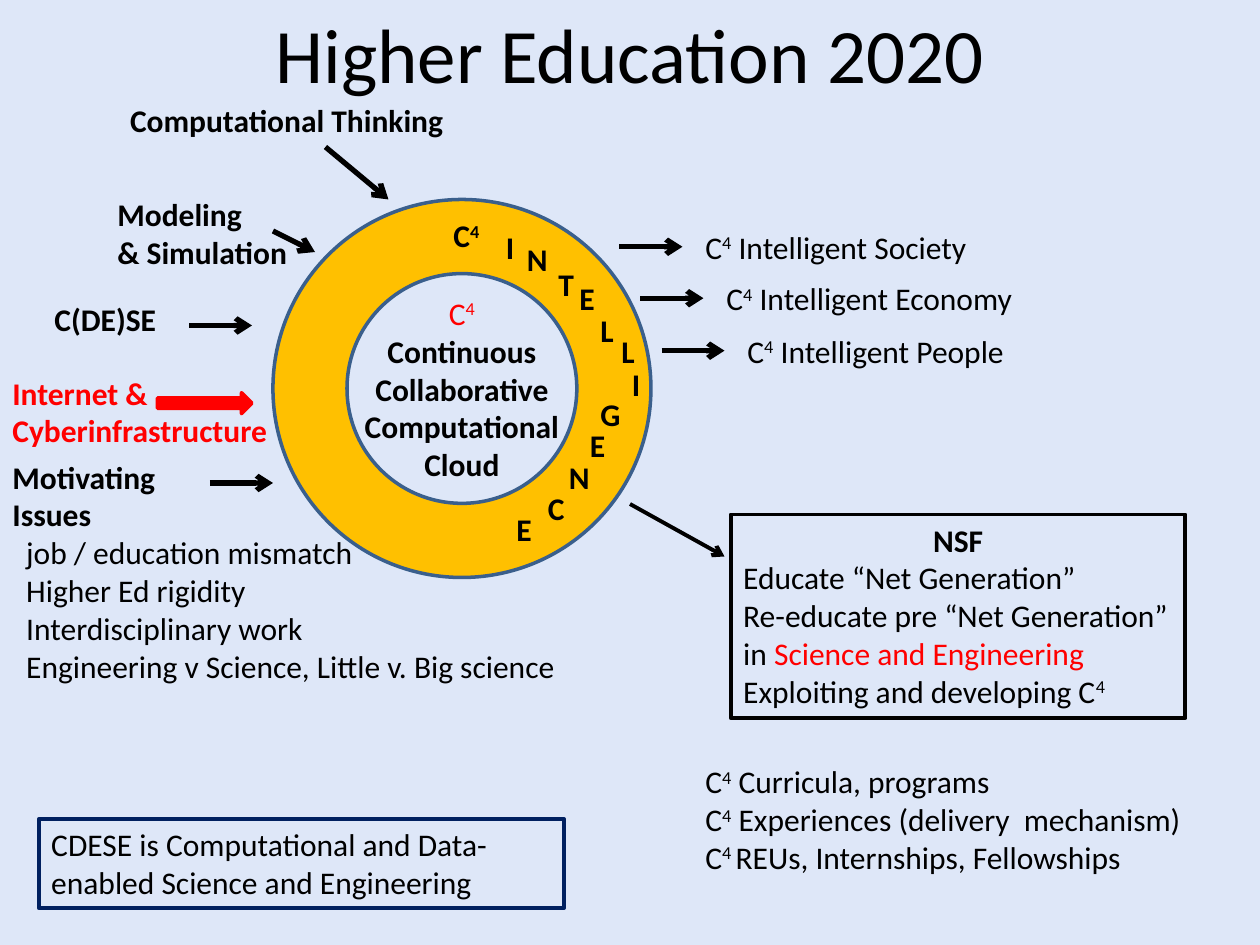
from dataclasses import dataclass

from lxml.etree import SubElement
from pptx import Presentation
from pptx.dml.color import RGBColor
from pptx.enum.shapes import MSO_CONNECTOR, MSO_SHAPE
from pptx.enum.text import MSO_ANCHOR, PP_ALIGN
from pptx.oxml.ns import qn
from pptx.util import Inches, Pt


@dataclass(frozen=True)
class Theme:
    font: str = "Calibri"
    title_size: float = 44
    body_size: float = 18
    background: RGBColor = RGBColor.from_string("DEE7F8")
    ink: RGBColor = RGBColor.from_string("000000")
    accent: RGBColor = RGBColor.from_string("FF0000")
    ring: RGBColor = RGBColor.from_string("FFC000")
    ring_edge: RGBColor = RGBColor.from_string("3A5F8C")
    navy: RGBColor = RGBColor.from_string("002060")


theme = Theme()

# Grid of 120 columns by 90 rows
COLUMNS, ROWS = 120, 90
deck = Presentation()
deck.slide_width, deck.slide_height = Inches(10), Inches(7.5)
CELL = deck.slide_width // COLUMNS
LINE_ROWS = 3.64  # height of one line of body text
PADDING_ROWS = 1.2


def grid(*cells):
    return [round(cell * CELL) for cell in cells]


def write(holder, text, size=theme.body_size, color=theme.ink, bold=False,
          align=PP_ALIGN.LEFT, indent=0, wrap=False, anchor=MSO_ANCHOR.TOP):
    """Append lines of text; *marks accent* and ^marks superscript^."""
    frame = holder.text_frame
    frame.word_wrap, frame.vertical_anchor = wrap, anchor
    for line in text.split("\n"):
        first = frame.paragraphs[0]
        paragraph = frame.add_paragraph() if first.runs else first
        paragraph.alignment = align
        if indent:
            paragraph._p.get_or_add_pPr().set("marL", str(Inches(indent)))
        for i, part in enumerate(line.split("*")):
            for j, piece in enumerate(part.split("^")):
                if not piece:
                    continue
                run = paragraph.add_run()
                run.text = piece
                run.font.name, run.font.size, run.font.bold = theme.font, Pt(size), bold
                run.font.color.rgb = theme.accent if i % 2 else color
                if j % 2:
                    run._r.get_or_add_rPr().set("baseline", "30000")


def panel(preset, cells, edge, width, fill=None):
    shape = slide.shapes.add_shape(preset, *grid(*cells))
    shape.shadow.inherit = False
    shape.line.color.rgb, shape.line.width = edge, Pt(width)
    if fill is None:
        shape.fill.background()
    else:
        shape.fill.solid()
        shape.fill.fore_color.rgb = fill
    return shape


# Slide and title
slide = deck.slides.add_slide(deck.slide_layouts[5])
slide.background.fill.solid()
slide.background.fill.fore_color.rgb = theme.background
title = slide.shapes.title
title.left, title.top, title.width, title.height = grid(6, 0, 108, 10)
write(title, "Higher Education 2020", size=theme.title_size,
      align=PP_ALIGN.CENTER, wrap=True, anchor=MSO_ANCHOR.MIDDLE)

# Ring with the four Cs
ring = panel(MSO_SHAPE.DONUT, (26, 19, 36, 36), theme.ring_edge, 2, theme.ring)
ring.adjustments[0] = 0.196
centered = {"align": PP_ALIGN.CENTER, "anchor": MSO_ANCHOR.MIDDLE, "wrap": True}
write(ring, "*C^4^*", **centered)
write(ring, "Continuous\nCollaborative\nComputational\nCloud", bold=True, **centered)

# Letters around the ring
letter_cells = [(47, 21.1), (49, 22.3), (52, 24.7), (54, 26), (56, 29), (58, 31),
                (59, 34.2), (56, 37), (55, 40), (53, 43), (51, 46), (48, 48)]
for letter, (column, row) in zip("INTELLIGENCE", letter_cells):
    write(slide.shapes.add_textbox(*grid(column, row, 4, 4.8)), letter,
          bold=True, wrap=True)

# Labels: column, row, width, text, format
strong = {"bold": True}
alert = {"bold": True, "color": theme.accent}
labels = [
    (42, 20, 5, "C^4^", strong),
    (11.2, 9, 32.5, "Computational Thinking", strong),
    (10, 18, 18.7, "Modeling\n& Simulation", strong),
    (4, 28, 12.1, "C(DE)SE", strong),
    (0, 35, 26.9, "Internet &\nCyberinfrastructure", alert),
    (66, 21.1, 27.7, "C^4^ Intelligent Society", {}),
    (68, 26, 30.1, "C^4^ Intelligent Economy", {}),
    (70, 31, 27.2, "C^4^ Intelligent People", {}),
    (66, 72, 48.4, "C^4^ Curricula, programs\nC^4^ Experiences (delivery  mechanism)\n"
                   "C^4 ^REUs, Internships, Fellowships", {}),
]
for column, row, width, text, style in labels:
    height = PADDING_ROWS + LINE_ROWS * len(text.split("\n"))
    write(slide.shapes.add_textbox(*grid(column, row, width, height)), text, **style)

# Motivating issues
issues = slide.shapes.add_textbox(*grid(0, 43, 54.8, 23))
write(issues, "Motivating\nIssues", bold=True)
write(issues, "job / education mismatch\nHigher Ed rigidity\nInterdisciplinary work\n"
              "Engineering v Science, Little v. Big science", indent=0.11)

# Boxed notes
agency = panel(MSO_SHAPE.RECTANGLE, (69.6, 49, 43.3, 19.4), theme.ink, 2.25)
write(agency, "NSF", bold=True, align=PP_ALIGN.CENTER)
write(agency, "Educate “Net Generation”\nRe-educate pre “Net Generation”\n"
              "in *Science and Engineering*\nExploiting and developing C^4^")
definition = panel(MSO_SHAPE.RECTANGLE, (3.7, 78, 50, 8.5), theme.navy, 2.25)
write(definition, "CDESE is Computational and Data-enabled Science and Engineering",
      wrap=True)

# Arrows into and out of the ring: start, end, weight
arrows = [
    (31, 14, 37, 19, 3), (26, 22, 30, 24, 3), (18, 31, 24, 31, 3),
    (20, 46, 26, 46, 3), (59, 23.5, 65, 23.5, 3), (61, 28.4, 67, 28.4, 3),
    (63, 33.4, 69, 33.4, 3), (60, 48, 69, 53, 2.25),
]
for *ends, weight in arrows:
    arrow = slide.shapes.add_connector(MSO_CONNECTOR.STRAIGHT, *grid(*ends))
    arrow.line.color.rgb, arrow.line.width = theme.ink, Pt(weight)
    SubElement(arrow.line._get_or_add_ln(), qn("a:tailEnd"), type="arrow")
    SubElement(arrow._element.spPr, qn("a:effectLst"))
panel(MSO_SHAPE.RIGHT_ARROW, (15, 37.4, 9, 2), theme.accent, 2, theme.accent)

deck.save("out.pptx")
